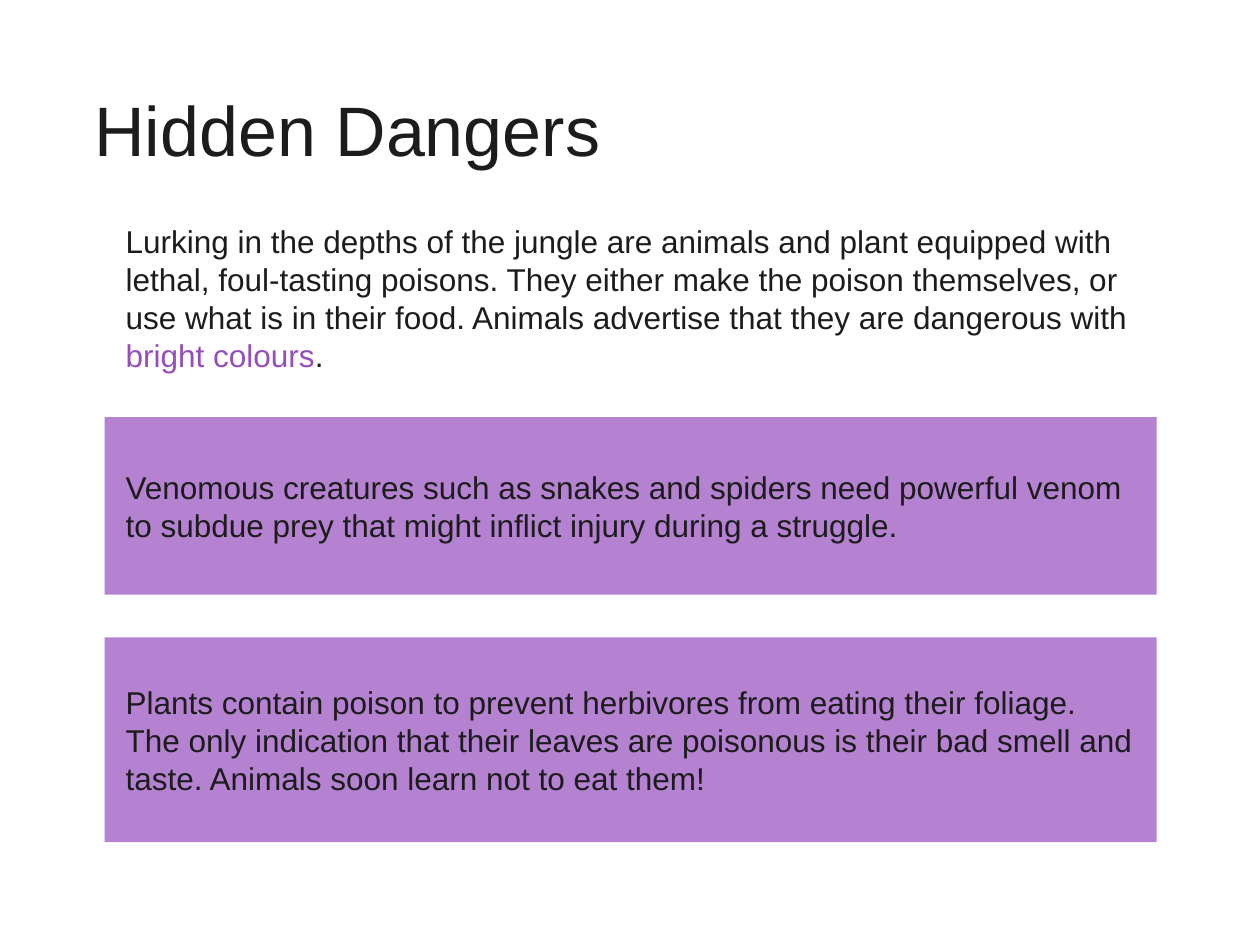
"""Build the Hidden Dangers slide: a title, an introduction and two tinted panels."""
from dataclasses import dataclass
from typing import Optional

from lxml.etree import SubElement
from pptx import Presentation
from pptx.dml.color import RGBColor
from pptx.enum.shapes import MSO_SHAPE as Shape
from pptx.enum.text import MSO_ANCHOR as Anchor, MSO_AUTO_SIZE as AutoSize, PP_ALIGN as Align
from pptx.oxml.ns import qn
from pptx.util import Pt

INK = "1C1C1C"
PURPLE = "954EBE"
LEFT, WIDTH = 59.8, 601.2


@dataclass(frozen=True)
class Span:
    text: str
    color: str = INK


@dataclass(frozen=True)
class Block:
    top: float
    height: float
    paragraphs: list[list[Span]]
    fill: Optional[str] = None


BLOCKS = [
    Block(113.8, 113, [[
        Span("Lurking in the depths of the jungle are animals and plant equipped with "
             "lethal, foul-tasting poisons. They either make the poison themselves, or "
             "use what is in their food. Animals advertise that they are dangerous with "),
        Span("bright colours", PURPLE),
        Span("."),
    ]]),
    Block(238.3, 101.5, [[
        Span("Venomous creatures such as snakes and spiders need powerful venom "
             "to subdue prey that might inflict injury during a struggle."),
    ]], PURPLE),
    Block(364.3, 117, [
        [Span("Plants contain poison to prevent herbivores from eating their foliage.")],
        [Span("The only indication that their leaves are poisonous is their bad smell and "
              "taste. Animals soon learn not to eat them!")],
    ], PURPLE),
]


def rgb(color: str) -> RGBColor:
    return RGBColor.from_string(color)


def write(box, paragraphs: list[list[Span]], size: float, inset: float, spacing: float = 1) -> None:
    frame = box.text_frame
    frame.word_wrap = True
    frame.auto_size = AutoSize.NONE
    frame.vertical_anchor = Anchor.MIDDLE
    frame.margin_left = frame.margin_right = Pt(inset)
    for index, spans in enumerate(paragraphs):
        para = frame.add_paragraph() if index else frame.paragraphs[0]
        para.alignment = Align.LEFT
        para.line_spacing = spacing
        for span in spans:
            run = para.add_run()
            run.text = span.text
            run.font.name = "Arial"
            run.font.size = Pt(size)
            run.font.color.rgb = rgb(span.color)


def tint(box, color: str, opacity: int) -> None:
    box.fill.solid()
    box.fill.fore_color.rgb = rgb(color)
    swatch = box.fill._xPr.find(qn("a:solidFill")).find(qn("a:srgbClr"))
    SubElement(swatch, qn("a:alpha")).set("val", str(opacity * 1000))


def add_block(page, block: Block) -> None:
    frame = Pt(LEFT), Pt(block.top), Pt(WIDTH), Pt(block.height)
    if block.fill:
        box = page.shapes.add_shape(Shape.RECTANGLE, *frame)
        box.shadow.inherit = False
        box.line.fill.background()
        tint(box, block.fill, 70)
    else:
        box = page.shapes.add_textbox(*frame)
    write(box, block.paragraphs, size=18, inset=12)


def add_title(page, text: str) -> None:
    title = page.shapes.title
    title.left, title.top = Pt(36), Pt(37.4)
    title.width, title.height = Pt(647.3), Pt(78.5)
    write(title, [[Span(text)]], size=40, inset=18, spacing=0.9)


def main() -> None:
    deck = Presentation()
    deck.slide_width, deck.slide_height = Pt(720), Pt(540)
    page = deck.slides.add_slide(deck.slide_layouts[5])
    add_title(page, "Hidden Dangers")
    for block in BLOCKS:
        add_block(page, block)
    deck.save("out.pptx")


if __name__ == "__main__":
    main()
